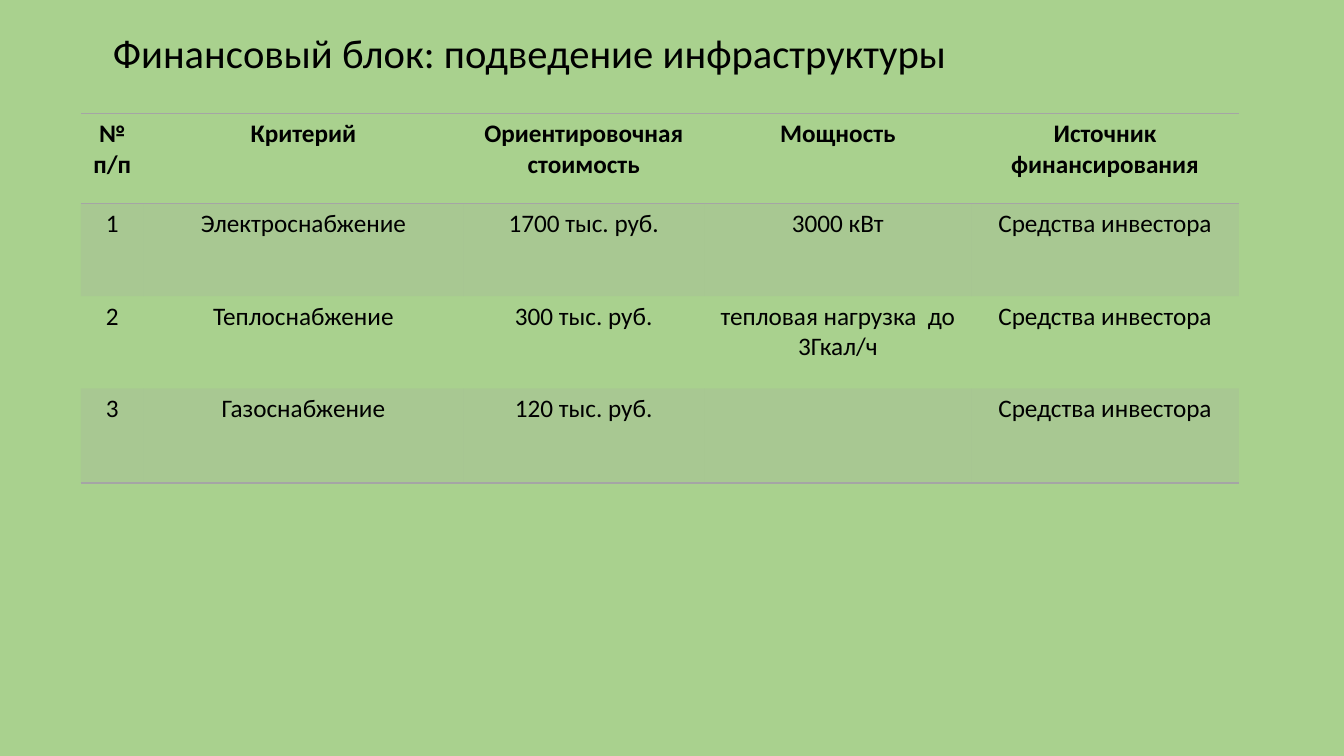
from lxml.etree import SubElement
from pptx import Presentation
from pptx.dml.color import RGBColor
from pptx.enum.text import MSO_ANCHOR, PP_ALIGN
from pptx.oxml import parse_xml
from pptx.oxml.ns import nsdecls, qn
from pptx.util import Emu, Pt

EMU_PER_PX = 9525
BACKGROUND = RGBColor(0xA9, 0xD1, 0x8E)
BLACK = RGBColor(0x00, 0x00, 0x00)
GRAY = RGBColor(0xA5, 0xA5, 0xA5)
BAND_OPACITY = 20
FONT = "Calibri"
NO_STYLE_NO_GRID = "{2D5ABB26-0587-4C30-8999-92F81FD0307C}"

COLUMN_WIDTHS = [60, 304, 230, 254, 255]
ROW_HEIGHTS = [86, 88, 88, 90]
INVESTOR = "Средства инвестора"
ROWS = [
    ["№ п/п", "Критерий", "Ориентировочная стоимость", "Мощность",
     "Источник финансирования"],
    ["1", "Электроснабжение", "1700 тыс. руб.", "3000 кВт", INVESTOR],
    ["2", "Теплоснабжение", "300 тыс. руб.", "тепловая нагрузка  до 3Гкал/ч",
     INVESTOR],
    ["3", "Газоснабжение", "120 тыс. руб.", "", INVESTOR],
]


def px(length):
    return Emu(length * EMU_PER_PX)


def write_text(text_frame, text, *, size, bold=False, align=PP_ALIGN.LEFT,
               line_spacing=1.0):
    paragraph = text_frame.paragraphs[0]
    paragraph.alignment = align
    paragraph.line_spacing = line_spacing
    paragraph.font.size = Pt(size)
    if text:
        run = paragraph.add_run()
        run.text = text
        run.font.name = FONT
        run.font.size = Pt(size)
        run.font.bold = bold
        run.font.color.rgb = BLACK


def add_title(slide, text):
    text_frame = slide.shapes.add_textbox(
        px(98), px(12), px(1104), px(81)).text_frame
    text_frame.word_wrap = True
    text_frame.vertical_anchor = MSO_ANCHOR.MIDDLE
    write_text(text_frame, text, size=29, line_spacing=0.9)


def fill_band(cell):
    """Fill the cell with translucent gray."""
    cell.fill.solid()
    cell.fill.fore_color.rgb = GRAY
    color = next(cell._tc.tcPr.iter(qn("a:srgbClr")))
    SubElement(color, qn("a:alpha"), val=str(BAND_OPACITY * 1000))


def set_borders(cell, sides):
    """Draw gray lines on the named sides, listed in schema order."""
    for position, side in enumerate(sides):
        line = parse_xml(
            f'<a:ln{side} {nsdecls("a")} w="{Pt(1)}"><a:solidFill>'
            f'<a:srgbClr val="{GRAY}"/></a:solidFill></a:ln{side}>')
        cell._tc.get_or_add_tcPr().insert(position, line)


def add_cost_table(slide):
    table = slide.shapes.add_table(
        len(ROWS), len(COLUMN_WIDTHS), px(77), px(108),
        px(sum(COLUMN_WIDTHS)), px(sum(ROW_HEIGHTS))).table
    table.horz_banding = False
    table._tbl.tblPr.find(qn("a:tableStyleId")).text = NO_STYLE_NO_GRID
    for column, width in zip(table.columns, COLUMN_WIDTHS):
        column.width = px(width)
    for row, height in zip(table.rows, ROW_HEIGHTS):
        row.height = px(height)

    borders = {0: "TB", len(ROWS) - 1: "B"}
    for row_index, texts in enumerate(ROWS):
        for column_index, text in enumerate(texts):
            cell = table.cell(row_index, column_index)
            write_text(cell.text_frame, text, size=18, bold=row_index == 0,
                       align=PP_ALIGN.CENTER)
            if row_index % 2:
                fill_band(cell)
            else:
                cell.fill.background()
            set_borders(cell, borders.get(row_index, ""))


def main():
    presentation = Presentation()
    presentation.slide_width = px(1280)
    presentation.slide_height = px(720)
    slide = presentation.slides.add_slide(presentation.slide_layouts[6])
    slide.background.fill.solid()
    slide.background.fill.fore_color.rgb = BACKGROUND
    add_title(slide, "Финансовый блок: подведение инфраструктуры")
    add_cost_table(slide)
    presentation.save("out.pptx")


if __name__ == "__main__":
    main()
